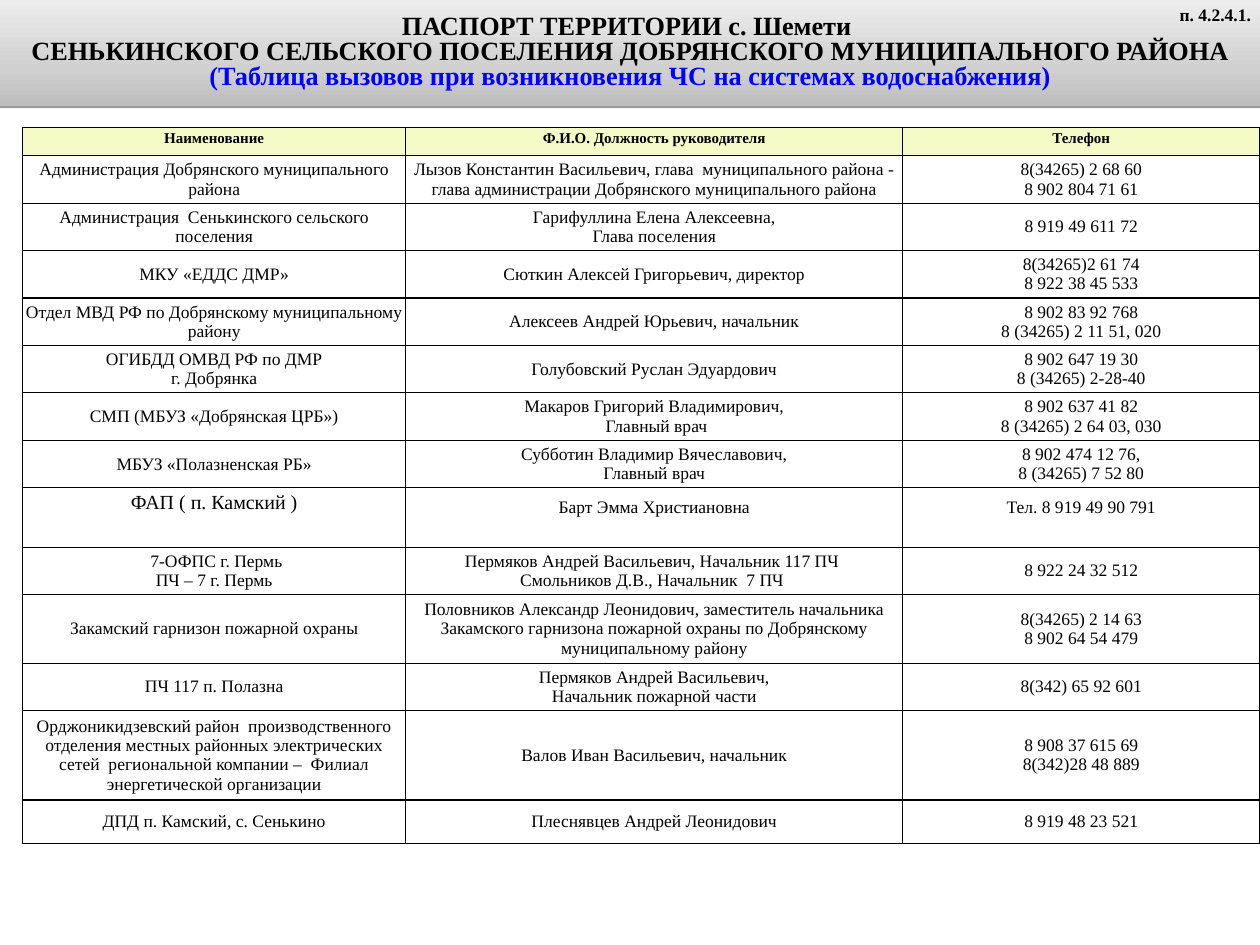
import copy

import pptx
import pptx.dml.color
import pptx.enum.text
import pptx.oxml
import pptx.oxml.ns
import pptx.util

Inches = pptx.util.Inches
Pt = pptx.util.Pt
RGBColor = pptx.dml.color.RGBColor
PP_ALIGN = pptx.enum.text.PP_ALIGN
MSO_ANCHOR = pptx.enum.text.MSO_ANCHOR

BLACK = RGBColor(0x00, 0x00, 0x00)
BLUE = RGBColor(0x00, 0x00, 0xFF)
HEADER_FILL = RGBColor(0xF4, 0xFB, 0xC7)
BAND_STOPS = [
    (0, RGBColor(0xBC, 0xBC, 0xBC)),
    (0.35, RGBColor(0xD0, 0xD0, 0xD0)),
    (1, RGBColor(0xED, 0xED, 0xED)),
]
NAMESPACE = pptx.oxml.ns.nsdecls("a")

HEADING = [
    ("ПАСПОРТ ТЕРРИТОРИИ с. Шемети ", BLACK),
    ("СЕНЬКИНСКОГО СЕЛЬСКОГО ПОСЕЛЕНИЯ ДОБРЯНСКОГО МУНИЦИПАЛЬНОГО РАЙОНА", BLACK),
    ("(Таблица вызовов при возникновения ЧС на системах водоснабжения)", BLUE),
]

# Row height, then name, head and telephone; a line break starts a paragraph
CONTACTS = [
    (0.31, "Наименование", "Ф.И.О. Должность руководителя", "Телефон"),
    (0.52, "Администрация Добрянского муниципального района",
     "Лызов Константин Васильевич, глава  муниципального района - "
     "глава администрации Добрянского муниципального района",
     "8(34265) 2 68 60\n8 902 804 71 61"),
    (0.52, "Администрация  Сенькинского сельского поселения",
     "Гарифуллина Елена Алексеевна,\nГлава поселения", "8 919 49 611 72"),
    (0.52, "МКУ «ЕДДС ДМР»", "Сюткин Алексей Григорьевич, директор",
     "8(34265)2 61 74\n8 922 38 45 533"),
    (0.52, "Отдел МВД РФ по Добрянскому муниципальному району",
     "Алексеев Андрей Юрьевич, начальник",
     "8 902 83 92 768\n8 (34265) 2 11 51, 020"),
    (0.52, "ОГИБДД ОМВД РФ по ДМР\nг. Добрянка", "Голубовский Руслан Эдуардович",
     "8 902 647 19 30\n8 (34265) 2-28-40"),
    (0.52, "СМП (МБУЗ «Добрянская ЦРБ»)",
     "Макаров Григорий Владимирович,\n Главный врач",
     "8 902 637 41 82\n8 (34265) 2 64 03, 030"),
    (0.52, "МБУЗ «Полазненская РБ»",
     "Субботин Владимир Вячеславович,\nГлавный врач",
     "8 902 474 12 76,\n8 (34265) 7 52 80"),
    (0.66, "ФАП ( п. Камский )", "Барт Эмма Христиановна", "Тел. 8 919 49 90 791"),
    (0.52, " 7-ОФПС г. Пермь\nПЧ – 7 г. Пермь",
     "Пермяков Андрей Васильевич, Начальник 117 ПЧ \n"
     "Смольников Д.В., Начальник  7 ПЧ ", "8 922 24 32 512"),
    (0.76, "Закамский гарнизон пожарной охраны",
     "Половников Александр Леонидович, заместитель начальника Закамского "
     "гарнизона пожарной охраны по Добрянскому муниципальному району",
     "8(34265) 2 14 63\n8 902 64 54 479"),
    (0.52, "ПЧ 117 п. Полазна",
     "Пермяков Андрей Васильевич,\nНачальник пожарной части", "8(342) 65 92 601"),
    (0.99, "Орджоникидзевский район  производственного отделения "
     "местных районных электрических сетей  региональной компании –  "
     "Филиал энергетической организации",
     "Валов Иван Васильевич, начальник", "8 908 37 615 69\n8(342)28 48 889"),
    (0.48, "ДПД п. Камский, с. Сенькино", "Плеснявцев Андрей Леонидович",
     "8 919 48 23 521"),
]
COLUMN_WIDTHS = [4.26, 5.52, 3.97]
CLINIC_ROW = 8


class PassportSlide:
    """Holds the style and the slide being built."""

    font_name = "Times New Roman"
    cell_margin = Inches(0.03)

    def __init__(self, presentation):
        self.slide = presentation.slides.add_slide(presentation.slide_layouts[5])

    def style(self, paragraph, size, color=BLACK, bold=False, align=PP_ALIGN.CENTER):
        paragraph.alignment = align
        for run in paragraph.runs:
            run.font.name = self.font_name
            run.font.size = Pt(size)
            run.font.bold = bold
            run.font.color.rgb = color

    def heading(self, lines, left, top, width, height):
        title = self.slide.shapes.title
        title.left, title.top = Inches(left), Inches(top)
        title.width, title.height = Inches(width), Inches(height)

        # Three-stop gradient, light at the top
        title.fill.gradient()
        title.fill.gradient_angle = 90
        stops = title.fill._fill._gradFill.gsLst
        stops.insert(1, copy.deepcopy(stops[0]))
        for stop, (position, color) in zip(title.fill.gradient_stops, BAND_STOPS):
            stop.position = position
            stop.color.rgb = color
        for stop in stops:
            for adjustment in list(stop[0]):
                stop[0].remove(adjustment)

        title._element.spPr.append(pptx.oxml.parse_xml(
            f'<a:effectLst {NAMESPACE}><a:outerShdw blurRad="0" dist="{Pt(1.6)}" '
            'dir="5400000" rotWithShape="0"><a:srgbClr val="000000">'
            '<a:alpha val="38000"/></a:srgbClr></a:outerShdw></a:effectLst>'))

        frame = title.text_frame
        frame.auto_size = pptx.enum.text.MSO_AUTO_SIZE.NONE
        frame.vertical_anchor = MSO_ANCHOR.MIDDLE
        frame.word_wrap = True
        frame.text = "\n".join(text for text, _ in lines)
        for paragraph, (_, color) in zip(frame.paragraphs, lines):
            paragraph.line_spacing = 0.8
            self.style(paragraph, 21, color, bold=True)

    def label(self, text, left, top, width, height):
        frame = self.slide.shapes.add_textbox(
            Inches(left), Inches(top), Inches(width), Inches(height)).text_frame
        frame.word_wrap = True
        frame.text = text
        self.style(frame.paragraphs[0], 14, bold=True, align=PP_ALIGN.RIGHT)

    def border(self, cell):
        properties = cell._tc.get_or_add_tcPr()
        for position, side in enumerate(("lnL", "lnR", "lnT", "lnB")):
            properties.insert(position, pptx.oxml.parse_xml(
                f'<a:{side} {NAMESPACE} w="{Pt(1)}"><a:solidFill>'
                f'<a:srgbClr val="{BLACK}"/></a:solidFill></a:{side}>'))

    def cell(self, cell, text, size, is_header):
        cell.margin_left = cell.margin_right = self.cell_margin
        cell.margin_top = cell.margin_bottom = self.cell_margin
        if is_header:
            cell.fill.solid()
            cell.fill.fore_color.rgb = HEADER_FILL
        else:
            cell.fill.background()
            cell.vertical_anchor = MSO_ANCHOR.MIDDLE
        self.border(cell)
        cell.text_frame.text = text
        for paragraph in cell.text_frame.paragraphs:
            self.style(paragraph, size, bold=is_header)

    def table(self, rows, widths, left, top):
        height = sum(row[0] for row in rows)
        table = self.slide.shapes.add_table(
            len(rows), len(widths), Inches(left), Inches(top),
            Inches(sum(widths)), Inches(height)).table
        table.first_row = table.horz_banding = False
        for column, width in zip(table.columns, widths):
            column.width = Inches(width)
        for r, (row_height, *texts) in enumerate(rows):
            table.rows[r].height = Inches(row_height)
            for c, text in enumerate(texts):
                self.cell(table.cell(r, c), text, 12 if r == 0 else 14, r == 0)
        return table


def main():
    presentation = pptx.Presentation()
    presentation.slide_width = Inches(14)
    presentation.slide_height = Inches(10.5)
    page = PassportSlide(presentation)

    # Heading band and clause number
    page.heading(HEADING, 0, 0, 14, 1.18)
    page.label("п. 4.2.4.1.", 12.94, 0, 1.06, 0.34)

    # Contacts, with the clinic row set larger and raised
    contacts = page.table(CONTACTS, COLUMN_WIDTHS, 0.25, 1.42)
    clinic, *clinic_details = contacts.rows[CLINIC_ROW].cells
    page.style(clinic.text_frame.paragraphs[0], 16)
    clinic.margin_bottom = Inches(0.35)
    for detail in clinic_details:
        detail.margin_bottom = Inches(0.25)

    presentation.save("out.pptx")


if __name__ == "__main__":
    main()
